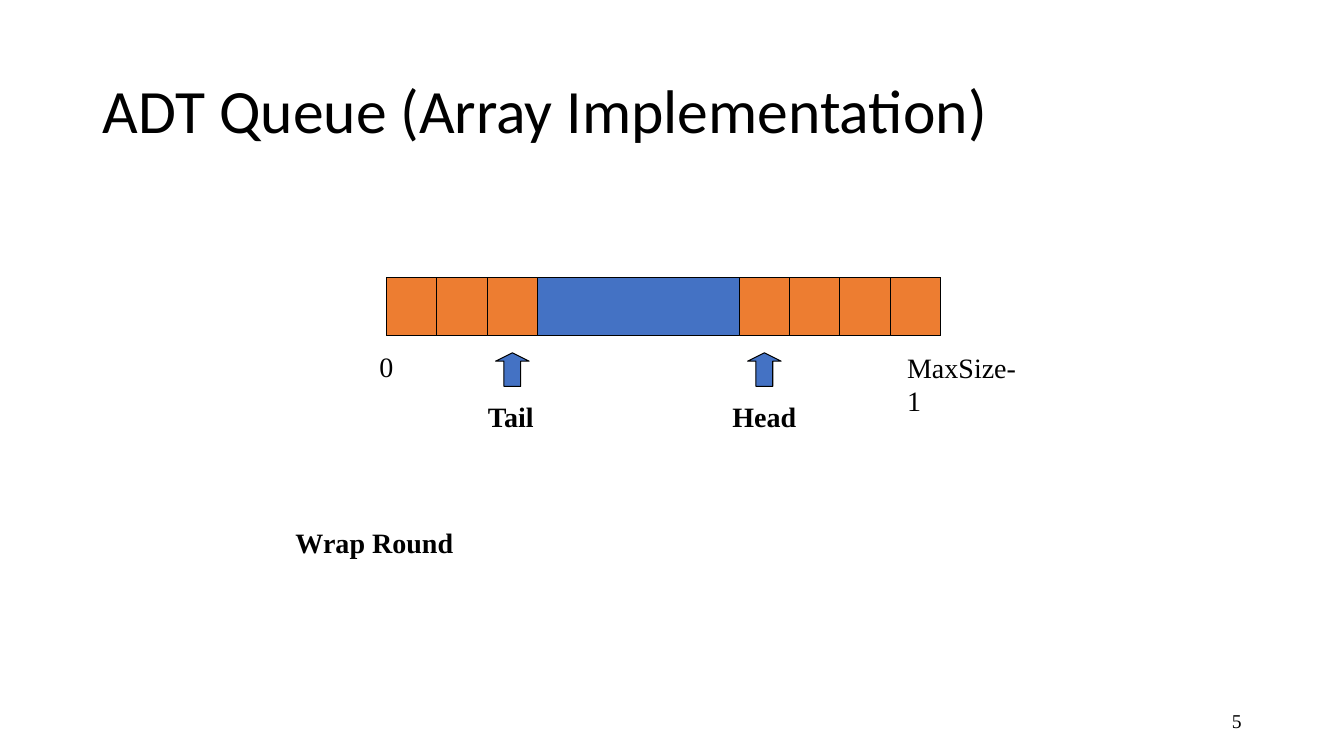
from pptx import Presentation
from pptx.dml.color import RGBColor
from pptx.enum.shapes import MSO_SHAPE
from pptx.enum.text import MSO_ANCHOR, MSO_AUTO_SIZE, PP_ALIGN
from pptx.util import Inches, Pt

BLACK = RGBColor(0x00, 0x00, 0x00)
BLUE = RGBColor(0x44, 0x72, 0xC4)
ORANGE = RGBColor(0xED, 0x7D, 0x31)

RECT, ARROW = MSO_SHAPE.RECTANGLE, MSO_SHAPE.UP_ARROW
LEFT, RIGHT = PP_ALIGN.LEFT, PP_ALIGN.RIGHT
TOP, MIDDLE = MSO_ANCHOR.TOP, MSO_ANCHOR.MIDDLE
FIXED, GROW = MSO_AUTO_SIZE.NONE, MSO_AUTO_SIZE.SHAPE_TO_FIT_TEXT

# The slide is a grid of 160 columns by 90 rows
COLS, ROWS = 160, 90
WIDTH, HEIGHT = Inches(13.33), Inches(7.5)


def write(frame, text, font="Times New Roman", size=20, bold=False,
          align=LEFT, anchor=TOP, wrap=False, fit=GROW, space=None):
    frame.word_wrap = wrap
    frame.auto_size = fit
    frame.vertical_anchor = anchor
    para = frame.paragraphs[0]
    para.alignment = align
    para.line_spacing = space
    run = para.add_run()
    run.text = text
    run.font.name = font
    run.font.size = Pt(size)
    run.font.bold = bold
    run.font.color.rgb = BLACK


class Canvas:
    def __init__(self, deck):
        self.slide = deck.slides.add_slide(deck.slide_layouts[5])
        self.shapes = self.slide.shapes

    def box(self, col, row, wide, high):
        return (round(col * WIDTH / COLS), round(row * HEIGHT / ROWS),
                round(wide * WIDTH / COLS), round(high * HEIGHT / ROWS))

    def title(self, text, *area):
        shape = self.shapes.title
        shape.left, shape.top, shape.width, shape.height = self.box(*area)
        write(shape.text_frame, text, font="Calibri", size=44,
              anchor=MIDDLE, wrap=True, fit=FIXED, space=0.9)

    def shape(self, kind, fill, *area):
        shape = self.shapes.add_shape(kind, *self.box(*area))
        shape.shadow.inherit = False
        shape.fill.solid()
        shape.fill.fore_color.rgb = fill
        shape.line.color.rgb = BLACK
        shape.line.width = Pt(0.75)
        return shape

    def label(self, text, *area, **style):
        box = self.shapes.add_textbox(*self.box(*area))
        write(box.text_frame, text, **style)


def main():
    deck = Presentation()
    deck.slide_width, deck.slide_height = WIDTH, HEIGHT
    page = Canvas(deck)
    page.title("ADT Queue (Array Implementation)", 11, 4.8, 138, 17.4)

    # Array: free span behind, used slots wrapping round the ends
    left, top, cell, high, slots = 46, 33, 6, 7, 11
    tail, head = 2, 7
    page.shape(RECT, BLUE, left, top, slots * cell, high)
    for slot in range(slots):
        if slot <= tail or slot >= head:
            page.shape(RECT, ORANGE, left + slot * cell, top, cell, high)

    # Pointers centred under their slots
    tip = 4
    for name, slot, wide in (("Tail", tail, 8.2), ("Head", head, 10)):
        mid = left + (slot + 0.5) * cell
        arrow = page.shape(ARROW, BLUE, mid - tip / 2, 42, tip, tip)
        arrow.adjustments[0], arrow.adjustments[1] = 0.5, 0.25
        page.label(name, mid - wide / 2, 47, wide, 5.2, bold=True)

    # Index labels and note
    page.label("0", 44, 41, 4.1, 5.2)
    page.label("MaxSize-1", 106.8, 41.1, 17, 5.2)
    page.label("Wrap Round", 34, 62, 21.2, 5.2, bold=True)

    # Page number
    page.label("5", 113, 83.4, 36, 4.8, size=14, align=RIGHT,
               anchor=MIDDLE, wrap=True, fit=FIXED)
    deck.save("out.pptx")


if __name__ == "__main__":
    main()
